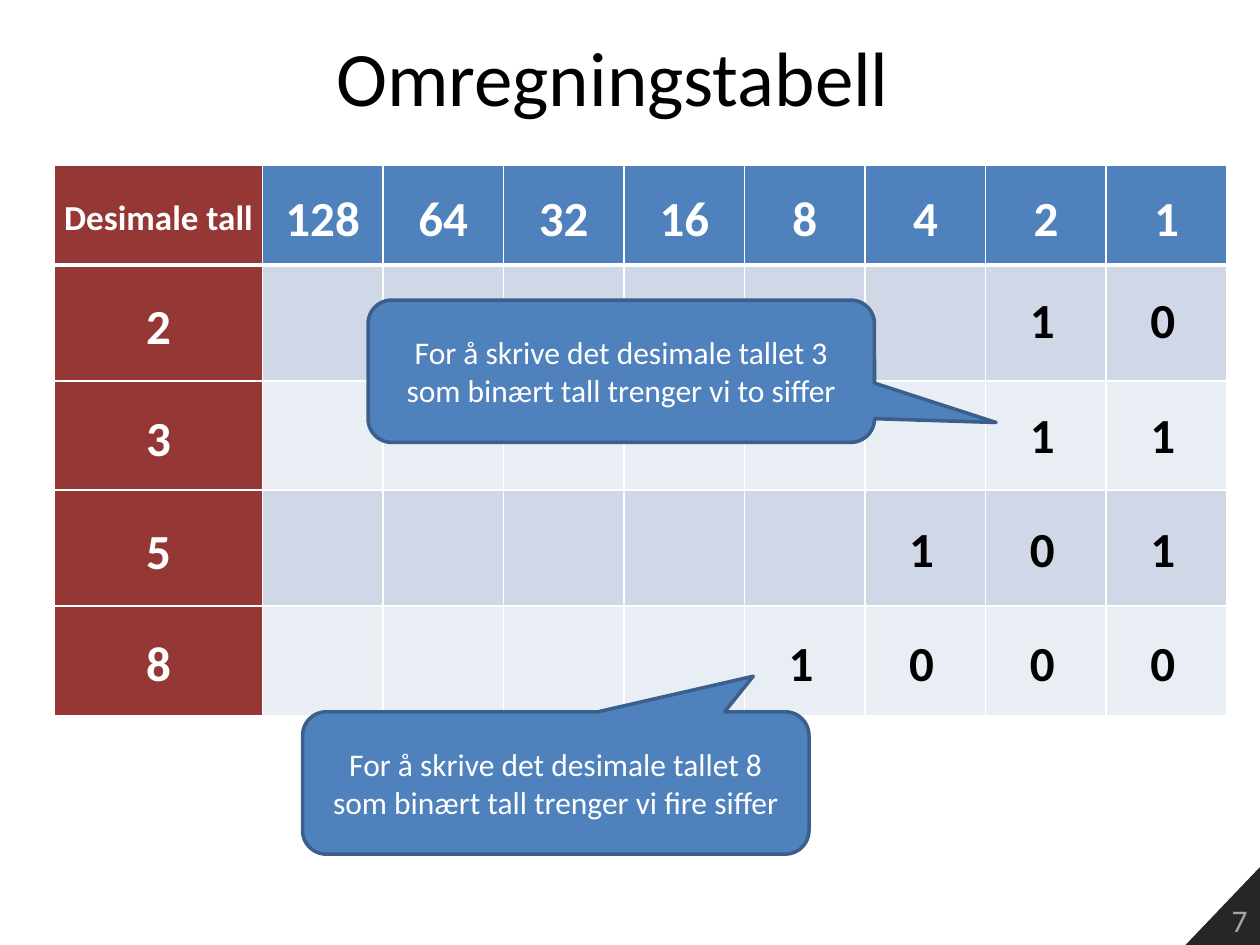
from lxml.etree import SubElement
from pptx import Presentation
from pptx.dml.color import RGBColor
from pptx.enum.shapes import MSO_SHAPE
from pptx.enum.text import MSO_ANCHOR as Anchor, MSO_AUTO_SIZE, PP_ALIGN as Align
from pptx.oxml.ns import qn
from pptx.util import Cm, Pt

COLORS = {
    "black": "000000",
    "white": "FFFFFF",
    "corner": "262626",
    "number": "A6A6A6",
    "red": "953735",
    "blue": "4F81BD",
    "outline": "3A5F8C",
    "odd_row": "D0D8E8",
    "even_row": "E9EDF4",
}
PLACE_VALUES = [str(2 ** power) for power in range(7, -1, -1)]
BINARY_ROWS = {"2": "10", "3": "11", "5": "101", "8": "1000"}
ROW_HEIGHTS = [2.01, 2.34, 2.2, 2.34, 2.2]
TABLE_LEFT, TABLE_TOP = 1.1, 3.33
LABEL_WIDTH, DIGIT_WIDTH = 4.19, 2.43
LAST_DIGIT_LEFT, FIRST_DIGIT_TOP, DIGIT_STEP = 22.94, 5.72, 2.3


class SlideBuilder:
    font_name = "Calibri"

    def __init__(self, slide):
        self.slide = slide

    def color(self, name):
        return RGBColor.from_string(COLORS[name])

    def fill(self, target, name):
        target.fill.solid()
        target.fill.fore_color.rgb = self.color(name)

    def set_text(self, frame, text, size, color, align=Align.CENTER, bold=False):
        frame.text = text
        paragraph = frame.paragraphs[0]
        paragraph.alignment = align
        font = paragraph.font
        font.name, font.size, font.bold = self.font_name, Pt(size), bold
        font.color.rgb = self.color(color)
        return paragraph

    def title(self, text, left, top, width, height):
        title = self.slide.shapes.title
        title.left, title.top = Cm(left), Cm(top)
        title.width, title.height = Cm(width), Cm(height)
        title.text_frame.vertical_anchor = Anchor.MIDDLE
        self.set_text(title.text_frame, text, 44, "black")

    def page_corner(self, text, left, top, right, bottom):
        builder = self.slide.shapes.build_freeform(Cm(left), Cm(bottom))
        builder.add_line_segments([(Cm(right), Cm(top)), (Cm(right), Cm(bottom))])
        corner = builder.convert_to_shape()
        corner.shadow.inherit = False
        self.fill(corner, "corner")
        corner.line.fill.background()
        corner.text_frame.vertical_anchor = Anchor.BOTTOM
        self.set_text(corner.text_frame, text, 18, "number", Align.RIGHT)

    def borders(self, cell, bottom):
        properties = cell._tc.get_or_add_tcPr()
        widths = {"a:lnL": 1, "a:lnR": 1, "a:lnT": 1, "a:lnB": bottom}
        for index, (tag, width) in enumerate(widths.items()):
            line = SubElement(properties, qn(tag), w=str(Pt(width)))
            solid = SubElement(line, qn("a:solidFill"))
            SubElement(solid, qn("a:srgbClr"), val=COLORS["white"])
            properties.insert(index, line)

    def cell(self, cell, text, size, color, bottom):
        self.fill(cell, color)
        self.borders(cell, bottom)
        if text:
            cell.vertical_anchor = Anchor.MIDDLE
            cell.margin_left = cell.margin_right = Cm(0.19)
            cell.margin_top = cell.margin_bottom = 0
            paragraph = self.set_text(cell.text_frame, text, size, "white", bold=True)
            paragraph.line_spacing = 1.15

    def conversion_table(self, header, labels):
        width = LABEL_WIDTH + DIGIT_WIDTH * len(PLACE_VALUES)
        table = self.slide.shapes.add_table(
            len(ROW_HEIGHTS), len(header), Cm(TABLE_LEFT), Cm(TABLE_TOP),
            Cm(width), Cm(sum(ROW_HEIGHTS))).table
        for index, column in enumerate(table.columns):
            column.width = Cm(DIGIT_WIDTH if index else LABEL_WIDTH)
        for row, height in zip(table.rows, ROW_HEIGHTS):
            row.height = Cm(height)
        for index, text in enumerate(header):
            self.cell(table.cell(0, index), text, 28 if index else 20,
                      "blue" if index else "red", 3)
        for row, label in enumerate(labels, 1):
            self.cell(table.cell(row, 0), label, 28, "red", 1)
            for column in range(1, len(header)):
                self.cell(table.cell(row, column), "", 28,
                          "odd_row" if row % 2 else "even_row", 1)

    def digit(self, text, left, top):
        box = self.slide.shapes.add_textbox(Cm(left), Cm(top), Cm(1.02), Cm(1.45))
        box.text_frame.word_wrap = False
        box.text_frame.auto_size = MSO_AUTO_SIZE.SHAPE_TO_FIT_TEXT
        self.set_text(box.text_frame, text, 28, "black", Align.LEFT, True)

    def callout(self, text, left, top, tip):
        callout = self.slide.shapes.add_shape(
            MSO_SHAPE.ROUNDED_RECTANGULAR_CALLOUT,
            Cm(left), Cm(top), Cm(10.21), Cm(2.87))
        callout.shadow.inherit = False
        callout.adjustments[0], callout.adjustments[1] = tip
        self.fill(callout, "blue")
        callout.line.color.rgb = self.color("outline")
        callout.line.width = Pt(2)
        callout.text_frame.word_wrap = True
        callout.text_frame.vertical_anchor = Anchor.MIDDLE
        self.set_text(callout.text_frame, text, 18, "white")


def main():
    presentation = Presentation()
    presentation.slide_width, presentation.slide_height = Cm(25.4), Cm(19.05)
    builder = SlideBuilder(presentation.slides.add_slide(presentation.slide_layouts[5]))
    builder.page_corner("7", 23.9, 17.48, 25.4, 19.05)
    builder.title("Omregningstabell ", 1.1, 0.33, 22.86, 2.39)
    builder.conversion_table(["Desimale tall", *PLACE_VALUES], BINARY_ROWS)
    for row, digits in enumerate(BINARY_ROWS.values()):
        for place, digit in enumerate(reversed(digits)):
            builder.digit(digit, LAST_DIGIT_LEFT - place * DIGIT_WIDTH,
                          FIRST_DIGIT_TOP + row * DIGIT_STEP)
    sentence = "For å skrive det desimale tallet {} som binært tall trenger vi {} siffer"
    builder.callout(sentence.format(3, "to"), 7.42, 6.05, (0.74, 0.36))
    builder.callout(sentence.format(8, "fire"), 6.1, 14.35, (0.39, -0.75))
    presentation.save("out.pptx")


if __name__ == "__main__":
    main()
